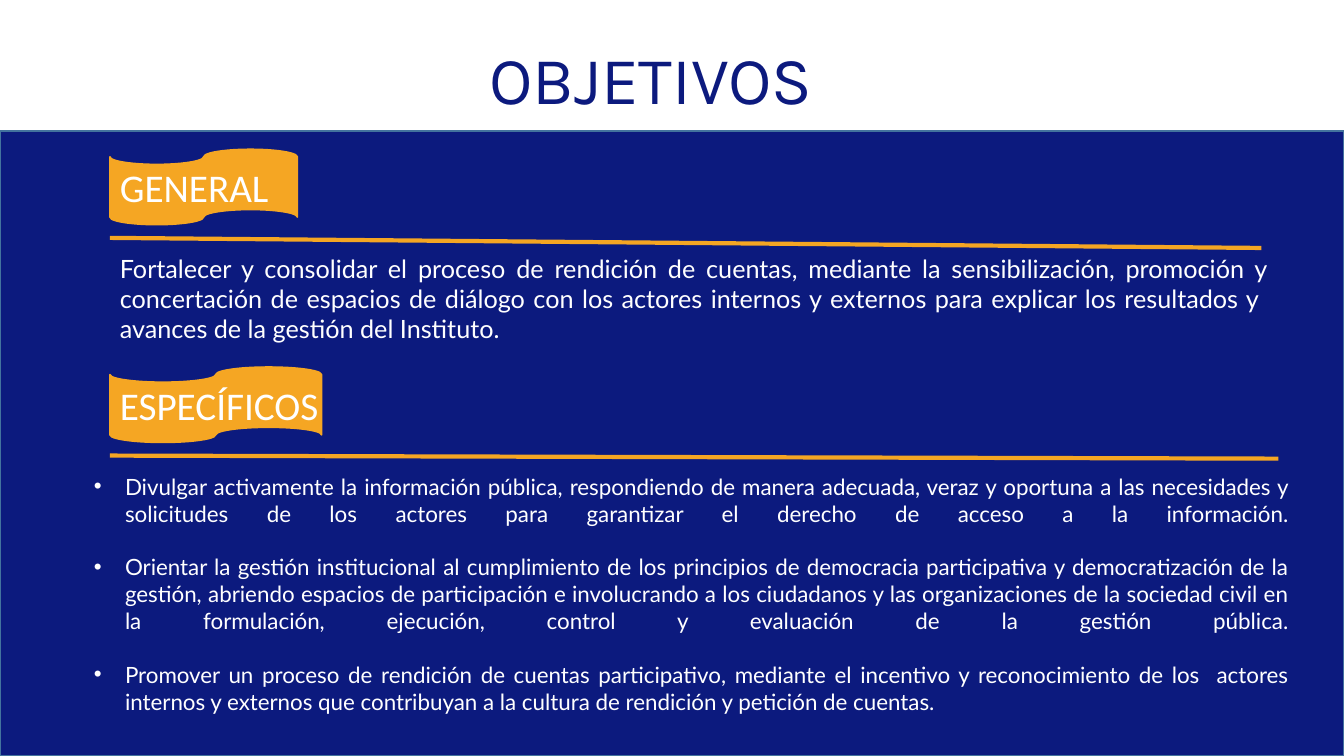
from pptx import Presentation
from pptx.dml.color import RGBColor
from pptx.enum.shapes import MSO_CONNECTOR, MSO_SHAPE
from pptx.enum.text import MSO_ANCHOR, MSO_AUTO_SIZE, PP_ALIGN
from pptx.oxml.ns import qn
from pptx.util import Inches, Pt
from lxml import etree

RECT, TAPE = MSO_SHAPE.RECTANGLE, MSO_SHAPE.FLOWCHART_PUNCHED_TAPE
STRAIGHT = MSO_CONNECTOR.STRAIGHT
LEFT, JUSTIFY = PP_ALIGN.LEFT, PP_ALIGN.JUSTIFY
TOP, NO_FIT = MSO_ANCHOR.TOP, MSO_AUTO_SIZE.NONE

# Content
TITLE = "OBJETIVOS"
GENERAL = (
    "Fortalecer y consolidar el proceso de rendición de cuentas, mediante la "
    "sensibilización, promoción y concertación de espacios de diálogo con los "
    "actores internos y externos para explicar los resultados y  avances de la "
    "gestión del Instituto."
)
SPECIFIC = [
    "Divulgar activamente la información pública, respondiendo de manera adecuada, "
    "veraz y oportuna a las necesidades y solicitudes de los actores para garantizar "
    "el derecho de acceso a la información.",
    "Orientar la gestión institucional al cumplimiento de los principios de democracia "
    "participativa y democratización de la gestión, abriendo espacios de participación "
    "e involucrando a los ciudadanos y las organizaciones de la sociedad civil en la "
    "formulación, ejecución, control y evaluación de la gestión pública.",
    "Promover un proceso de rendición de cuentas participativo, mediante el incentivo "
    "y reconocimiento de los  actores internos y externos que contribuyan a la cultura "
    "de rendición y petición de cuentas.",
]
# Heading, top, tape width, label width, rule end, rule drop
SECTIONS = [
    ("GENERAL", 1.48, 1.86, 1.86, 12.51, 0.10),
    ("ESPECÍFICOS", 3.64, 2.10, 2.30, 12.68, 0.03),
]

# Layout and style
W, H = 13.33, 7.5
BAND_TOP = 1.3
MARGIN = 1.09
TAPE_H, LABEL_H, RULE_GAP = 0.75, 0.57, 0.88
INDENT = 0.31
NAVY, EDGE, ORANGE, WHITE = "0C1A7E", "43739E", "F5A623", "FFFFFF"
TITLE_FONT = {"name": "Karla", "size": Pt(48)}
LABEL_FONT = {"name": "Calibri", "size": Pt(28)}
GENERAL_FONT = {"name": "Lato", "size": Pt(18)}
SPECIFIC_FONT = {"name": "Lato", "size": Pt(16)}


def rgb(value):
    return RGBColor.from_string(value)


def box(*lengths):
    return [Inches(v) for v in lengths]


def place(sp, *lengths):
    sp.left, sp.top, sp.width, sp.height = box(*lengths)


def add_panel(s, kind, fill, line, *lengths):
    sp = s.shapes.add_shape(kind, *box(*lengths))
    sp.shadow.inherit = False
    sp.fill.solid()
    sp.fill.fore_color.rgb = rgb(fill)
    sp.line.color.rgb = rgb(line)
    sp.line.width = Pt(1)
    return sp


def write(sp, lines, font, color=WHITE, align=LEFT):
    tf = sp.text_frame
    for key, value in {"word_wrap": True, "auto_size": NO_FIT,
                       "vertical_anchor": TOP}.items():
        setattr(tf, key, value)
    for i, line in enumerate(lines):
        p = tf.paragraphs[0] if i == 0 else tf.add_paragraph()
        p.alignment = align
        p.space_before = Pt(0)
        r = p.add_run()
        r.text = line
        for key, value in font.items():
            setattr(r.font, key, value)
        r.font.color.rgb = rgb(color)
    return tf


def add_rule(s, x1, y1, x2, y2):
    rule = s.shapes.add_connector(STRAIGHT, *box(x1, y1, x2, y2))
    rule.line.color.rgb = rgb(ORANGE)
    rule.line.width = Pt(3)
    etree.SubElement(rule._element.spPr, qn("a:effectLst"))


prs = Presentation()
prs.slide_width, prs.slide_height = box(W, H)
s = prs.slides.add_slide(prs.slide_layouts[1])
title, body = s.placeholders

# Blue band, sent behind the placeholders
band = add_panel(s, RECT, NAVY, EDGE, 0, BAND_TOP, W, H - BAND_TOP)
s.shapes._spTree.insert(2, band._element)

# Title
place(title, 4.75, 0.32, 5.35, 0.91)
write(title, [TITLE], TITLE_FONT, NAVY)

# Section headings: tape, label and rule
for heading, top, tape_w, label_w, rule_end, drop in SECTIONS:
    add_panel(s, TAPE, ORANGE, ORANGE, MARGIN, top, tape_w, TAPE_H)
    label_top = top + (TAPE_H - LABEL_H) / 2
    label = s.shapes.add_textbox(*box(MARGIN, label_top, label_w, LABEL_H))
    write(label, [heading], LABEL_FONT)
    rule_top = top + RULE_GAP
    add_rule(s, MARGIN, rule_top, rule_end, rule_top + drop)

# General objective
general = s.shapes.add_textbox(*box(MARGIN, 2.46, 11.58, 1.01))
write(general, [GENERAL], GENERAL_FONT, align=JUSTIFY)

# Specific objectives; a closing break justifies the last line of an item
place(body, 0.83, 4.64, 12.06, 2.52)
items = write(body, SPECIFIC, SPECIFIC_FONT, align=JUSTIFY).paragraphs
for p in items:
    pPr = p._p.get_or_add_pPr()
    pPr.set("marL", str(Inches(INDENT)))
    pPr.set("indent", str(-Inches(INDENT)))
for p in items[:-1]:
    p.add_line_break()
    p.font.size = SPECIFIC_FONT["size"]
    end = etree.SubElement(p._p, qn("a:endParaRPr"))
    end.set("sz", str(int(SPECIFIC_FONT["size"].pt * 100)))

prs.save("out.pptx")
